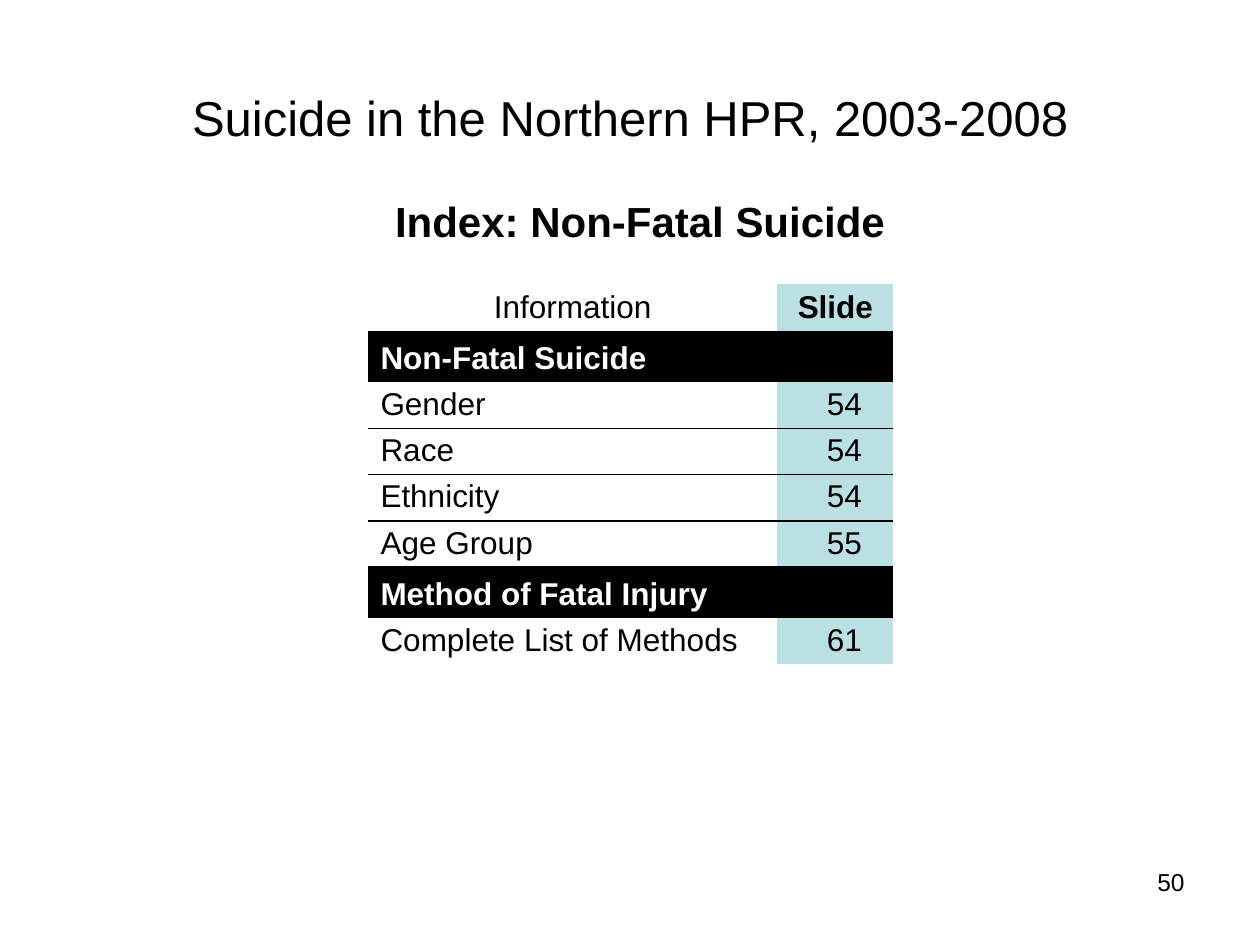
"""Build the index slide for non-fatal suicide in the Northern HPR."""
from dataclasses import dataclass

from lxml.etree import SubElement
from pptx import Presentation
from pptx.dml.color import RGBColor
from pptx.enum.text import MSO_ANCHOR as Anchor, PP_ALIGN as Align
from pptx.oxml.ns import qn
from pptx.util import Inches, Pt

COLORS = {"text": "000000", "bar": "000000", "bar_text": "FFFFFF", "slide_column": "BBE0E3"}
FONT = "Arial"
NO_STYLE = "{2D5ABB26-0587-4C30-8999-92F81FD0307C}"


@dataclass
class IndexRow:
    label: str
    number: str = ""
    kind: str = "entry"


ROWS = [
    IndexRow("Information", "Slide", "header"),
    IndexRow("Non-Fatal Suicide", kind="section"),
    IndexRow("Gender", "54"),
    IndexRow("Race", "54"),
    IndexRow("Ethnicity", "54"),
    IndexRow("Age Group", "55"),
    IndexRow("Method of Fatal Injury", kind="section"),
    IndexRow("Complete List of Methods", "61"),
]


def write(frame, text: str, size: int, align, color: str = "text", bold: bool = False):
    """Write one formatted run and return its paragraph."""
    paragraph = frame.paragraphs[0]
    paragraph.alignment = align
    run = paragraph.add_run()
    run.text = text
    font = run.font
    font.name, font.size, font.bold = FONT, Pt(size), bold
    font.color.rgb = RGBColor.from_string(COLORS[color])
    return paragraph


def add_text_box(slide, box: tuple, text: str, size: int, align, bold: bool = False) -> None:
    """Add a wrapping text box holding one line."""
    frame = slide.shapes.add_textbox(*map(Inches, box)).text_frame
    frame.word_wrap = True
    write(frame, text, size, align, bold=bold)


def add_border(cell, side: str) -> None:
    """Draw a one-point border on a cell side such as lnT or lnB."""
    properties = cell._tc.get_or_add_tcPr()
    line = SubElement(properties, qn(f"a:{side}"), w=str(Pt(1)))
    fill = SubElement(line, qn("a:solidFill"))
    SubElement(fill, qn("a:srgbClr"), val=COLORS["text"])


def fill_cell(cell, row: IndexRow, column: int, sides: list) -> None:
    """Fill one table cell with its text, borders and background."""
    is_section, is_header = row.kind == "section", row.kind == "header"
    for side in sides:
        add_border(cell, side)
    background = "bar" if is_section else "slide_column" if column else None
    if background:
        cell.fill.solid()
        cell.fill.fore_color.rgb = RGBColor.from_string(COLORS[background])
    else:
        cell.fill.background()
    cell.vertical_anchor = Anchor.BOTTOM
    text = row.number if column else row.label
    if not text:
        return
    if column and not is_header:
        cell.margin_right = Inches(0.25)
    align = Align.CENTER if is_header else Align.RIGHT if column else Align.LEFT
    paragraph = write(cell.text_frame, text, 18, align,
                      "bar_text" if is_section else "text",
                      is_section or (is_header and column == 1))
    paragraph.line_spacing = 0.95
    paragraph.space_before = Pt(1.8)


def add_index_table(slide, rows: list) -> None:
    """Add the index table, ruling a line between neighbouring entries."""
    frame = slide.shapes.add_table(len(rows), 2, Inches(2.92), Inches(2.25),
                                   Inches(4.17), Inches(3.08))
    table = frame.table
    table.first_row = table.horz_banding = False
    table._tbl.tblPr.find(qn("a:tableStyleId")).text = NO_STYLE
    for column, width in zip(table.columns, (3.25, 0.92)):
        column.width = Inches(width)
    kinds = ["", *(row.kind for row in rows), ""]
    for index, row in enumerate(rows):
        table.rows[index].height = Inches(0.38 if row.kind == "header" else 0.3)
        neighbours = {"lnT": kinds[index], "lnB": kinds[index + 2]}
        sides = [side for side, kind in neighbours.items() if kind == row.kind == "entry"]
        for column in range(2):
            fill_cell(table.cell(index, column), row, column, sides)
    frame.height = Inches(3.08)


def main() -> None:
    """Build and save the presentation."""
    presentation = Presentation()
    presentation.slide_width, presentation.slide_height = Inches(10), Inches(7.5)
    slide = presentation.slides.add_slide(presentation.slide_layouts[5])
    title = slide.shapes.title
    title.left, title.top, title.width, title.height = map(Inches, (0.5, 0.3, 9, 1.25))
    title.text_frame.vertical_anchor = Anchor.MIDDLE
    write(title.text_frame, "Suicide in the Northern HPR, 2003-2008", 28, Align.CENTER)
    add_index_table(slide, ROWS)
    add_text_box(slide, (1.83, 1.5, 6.5, 0.58), "Index: Non-Fatal Suicide", 24, Align.CENTER, True)
    add_text_box(slide, (7.17, 6.83, 2.33, 0.52), "50", 14, Align.RIGHT)
    presentation.save("out.pptx")


if __name__ == "__main__":
    main()
